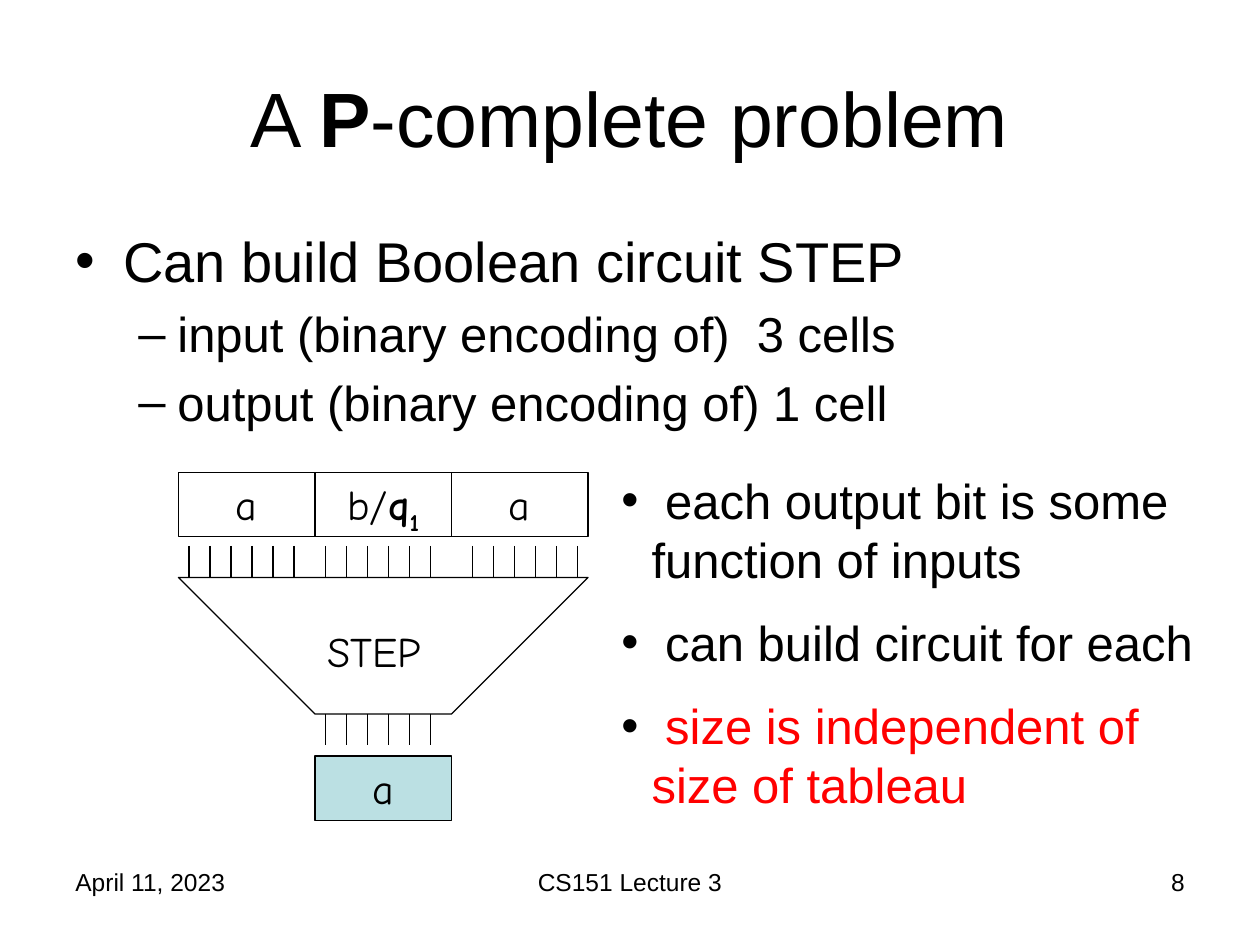
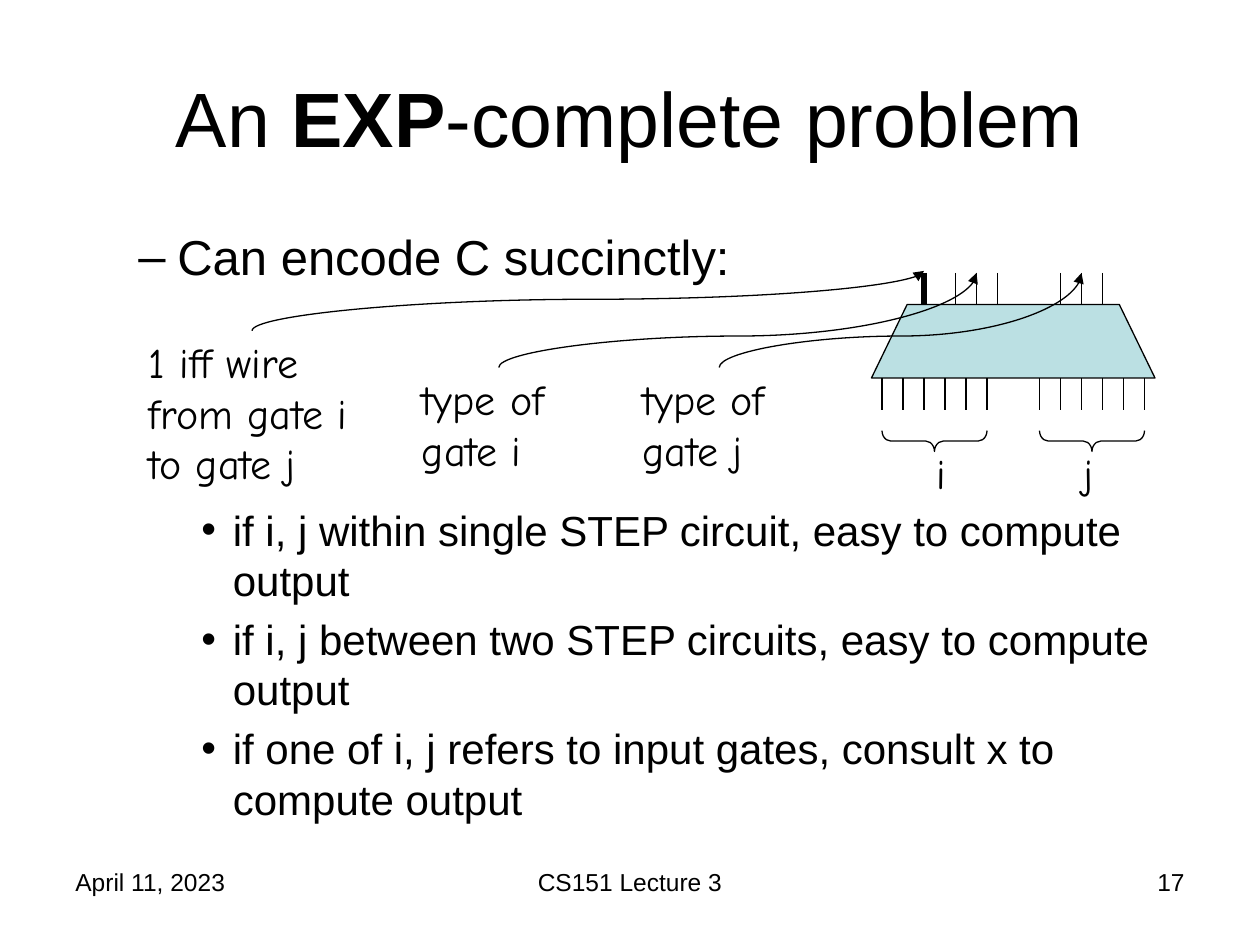
from lxml.etree import SubElement
from pptx import Presentation
from pptx.dml.color import RGBColor
from pptx.enum.shapes import MSO_CONNECTOR, MSO_SHAPE
from pptx.enum.text import MSO_ANCHOR, PP_ALIGN
from pptx.oxml.ns import qn
from pptx.util import Inches, Pt

BLACK = RGBColor(0, 0, 0)
RED = RGBColor(255, 0, 0)
PALE_TEAL = RGBColor(0xBB, 0xE0, 0xE3)
PRINT_FONT = "Arial"
HAND_FONT = "Comic Neue"
CELLS_PER_INCH = 12

OUTLINE_LEVELS = [
    dict(size=32, bullet="•", margin=0.38, hanging=0.38, gap=0.2),
    dict(size=28, bullet="–", margin=0.81, hanging=0.31, gap=0.2),
    dict(size=24, bullet="•", margin=1.25, hanging=0.25, gap=0.2),
]
SIDE_NOTE = dict(size=28, bullet="•", margin=0.24, hanging=0.24, gap=0.5)
SKETCH_GAP_POINTS = 125


def grid(cells):
    return Inches(cells / CELLS_PER_INCH)


def add_span(para, text, size=28, font=PRINT_FONT, color=BLACK, bold=False, baseline=0):
    span = para.add_run()
    span.text = text
    span.font.size = Pt(size)
    span.font.name = font
    span.font.color.rgb = color
    span.font.bold = bold
    if baseline:
        span.font._element.set("baseline", str(baseline * 1000))


class SlideWriter:
    def __init__(self, deck):
        self.deck = deck
        self.page = None

    def start_page(self, title, number):
        self.page = self.deck.slides.add_slide(self.deck.slide_layouts[6])
        heading = self.text_box(6, 3.6, 108, 15, title, size=44, align=PP_ALIGN.CENTER)
        heading.text_frame.vertical_anchor = MSO_ANCHOR.MIDDLE
        footers = [
            (6, 28, "April 11, 2023", PP_ALIGN.LEFT),
            (41, 38, "CS151 Lecture 3", PP_ALIGN.CENTER),
            (86, 28, number, PP_ALIGN.RIGHT),
        ]
        for column, width, text, align in footers:
            self.text_box(column, 82, width, 6.2, [(text, {})], size=14, align=align)

    def fill_text(self, box, spans, align=PP_ALIGN.LEFT, **style):
        frame = box.text_frame
        frame.word_wrap = True
        frame.vertical_anchor = MSO_ANCHOR.TOP
        para = frame.paragraphs[0]
        para.alignment = align
        for text, changes in spans:
            add_span(para, text, **{**style, **changes})

    def empty_box(self, column, row, width, height):
        return self.page.shapes.add_textbox(grid(column), grid(row), grid(width), grid(height))

    def text_box(self, column, row, width, height, spans, **style):
        box = self.empty_box(column, row, width, height)
        self.fill_text(box, spans, **style)
        return box

    def label(self, column, row, width, height, text):
        self.text_box(column, row, width, height, [(text, {})], size=24, font=HAND_FONT)

    def bullets(self, column, row, width, height, items):
        frame = self.empty_box(column, row, width, height).text_frame
        frame.word_wrap = True
        for index, (spans, level) in enumerate(items):
            para = frame.add_paragraph() if index else frame.paragraphs[0]
            gap = level["gap"] * level["size"] if index else 0
            para.space_before = Pt(level.get("before", gap))
            properties = para._p.get_or_add_pPr()
            properties.set("marL", str(Inches(level["margin"])))
            properties.set("indent", str(-Inches(level["hanging"])))
            SubElement(properties, qn("a:buFont"), typeface=PRINT_FONT)
            SubElement(properties, qn("a:buChar"), char=level["bullet"])
            for text, changes in spans:
                add_span(para, text, size=level["size"], **changes)

    def outline(self, items):
        self.bullets(6, 21, 108, 59.4, items)

    def paint(self, shape, fill=None):
        shape.shadow.inherit = False
        if fill is None:
            shape.fill.background()
        else:
            shape.fill.solid()
            shape.fill.fore_color.rgb = fill
        shape.line.color.rgb = BLACK
        shape.line.width = Pt(0.75)

    def preset(self, kind, column, row, width, height, fill=None):
        shape = self.page.shapes.add_shape(
            kind, grid(column), grid(row), grid(width), grid(height))
        self.paint(shape, fill)
        return shape

    def tape_cell(self, column, row, spans, fill=None):
        cell = self.preset(MSO_SHAPE.RECTANGLE, column, row, 13, 6.12, fill)
        self.fill_text(cell, spans, size=24, font=HAND_FONT, align=PP_ALIGN.CENTER)

    def brace(self, middle, row, width):
        depth = 2
        brace = self.preset(
            MSO_SHAPE.LEFT_BRACE, middle - depth / 2, row - width / 2, depth, width)
        brace.rotation = 270
        brace.adjustments[0] = 0.417

    def polygon(self, corners, fill=None):
        points = [(grid(column), grid(row)) for column, row in corners]
        builder = self.page.shapes.build_freeform(*points[0])
        builder.add_line_segments(points[1:], close=True)
        self.paint(builder.convert_to_shape(), fill)

    def connector(self, kind, start, end, weight=0.75):
        line = self.page.shapes.add_connector(kind, *map(grid, start + end))
        line.line.color.rgb = BLACK
        line.line.width = Pt(weight)
        SubElement(line._element.spPr, qn("a:effectLst"))
        return line

    def wires(self, columns, row, weight=0.75):
        for column in columns:
            self.connector(MSO_CONNECTOR.STRAIGHT, (column, row), (column, row + 3), weight)

    def curved_arrow(self, start, end, bend=3):
        across, rise = end[0] - start[0], start[1] - end[1]
        arrow = self.connector(MSO_CONNECTOR.CURVE, start, end)
        arrow.left = grid((start[0] + end[0] - rise) / 2)
        arrow.top = grid((start[1] + end[1] - across) / 2)
        arrow.width, arrow.height = grid(rise), grid(across)
        properties = arrow._element.spPr
        transform = properties.find(qn("a:xfrm"))
        transform.set("rot", str(270 * 60000))
        for flip in ("flipH", "flipV"):
            transform.attrib.pop(flip, None)
        adjustments = properties.find(qn("a:prstGeom")).find(qn("a:avLst"))
        SubElement(adjustments, qn("a:gd"), name="adj1",
                   fmla=f"val {round(bend / rise * 100000)}")
        SubElement(properties.find(qn("a:ln")), qn("a:tailEnd"), type="triangle")


def build_step_page(writer):
    writer.start_page([("A ", {}), ("P", {"bold": True}), ("-complete problem", {})], "8")
    main, detail = OUTLINE_LEVELS[:2]
    writer.outline([
        ([("Can build Boolean circuit STEP", {})], main),
        ([("input (binary encoding of)  3 cells", {})], detail),
        ([("output (binary encoding of) 1 cell", {})], detail),
    ])
    symbol = [("a", {})]
    state = [("b/", {}), ("q", {"bold": True}), ("1", {"bold": True, "baseline": -25})]
    for index, spans in enumerate([symbol, state, symbol]):
        writer.tape_cell(17 + 13 * index, 45, spans)
    writer.tape_cell(30, 72, symbol, PALE_TEAL)
    writer.polygon([(17, 55), (30, 68), (43, 68), (56, 55)])
    for first, row in [(18, 52), (31, 52), (45, 52), (31, 68)]:
        writer.wires(range(first, first + 12, 2), row)
    writer.label(30, 59, 16, 6, "STEP")
    writer.bullets(58, 44.2, 59, 34.8, [
        ([(" each output bit is some function of inputs", {})], SIDE_NOTE),
        ([(" can build circuit for each", {})], SIDE_NOTE),
        ([(" ", {}), ("size is independent of size of tableau", {"color": RED})], SIDE_NOTE),
    ])


def build_encoding_page(writer):
    writer.start_page([("An ", {}), ("EXP", {"bold": True}), ("-complete problem", {})], "17")
    main, detail = OUTLINE_LEVELS[1:]
    below_sketch = {**detail, "before": SKETCH_GAP_POINTS}
    writer.outline([
        ([("Can encode C succinctly:", {})], main),
        ([("if i, j within single STEP circuit, easy to compute output", {})], below_sketch),
        ([("if i, j between two STEP circuits, easy to compute output", {})], detail),
        ([("if one of i, j refers to input gates, consult x to compute output", {})], detail),
    ])
    for first, name, name_column in [(84, "i", 88), (99, "j", 102)]:
        writer.wires(range(first, first + 12, 2), 36)
        writer.brace(first + 5, 42, 10)
        writer.label(name_column, 42, 4, 6, name)
    writer.polygon([(83, 36), (86.4, 29), (106.6, 29), (110, 36)], PALE_TEAL)
    writer.wires([88], 26, weight=3)
    writer.wires([91, 93, 95, 101, 103, 105], 26)
    outputs = [
        (13, 31.5, 22, 15.6, "1 iff wire from gate i to gate j", (88, 25.8)),
        (39, 35, 17, 10.8, "type of gate i", (93, 26)),
        (60, 35, 17, 10.8, "type of gate j", (103, 26)),
    ]
    for column, row, width, height, text, target in outputs:
        writer.label(column, row, width, height, text)
        writer.curved_arrow((column + width / 2, row), target)


def main():
    deck = Presentation()
    deck.slide_width, deck.slide_height = Inches(10), Inches(7.5)
    writer = SlideWriter(deck)
    build_step_page(writer)
    build_encoding_page(writer)
    deck.save("out.pptx")


if __name__ == "__main__":
    main()
